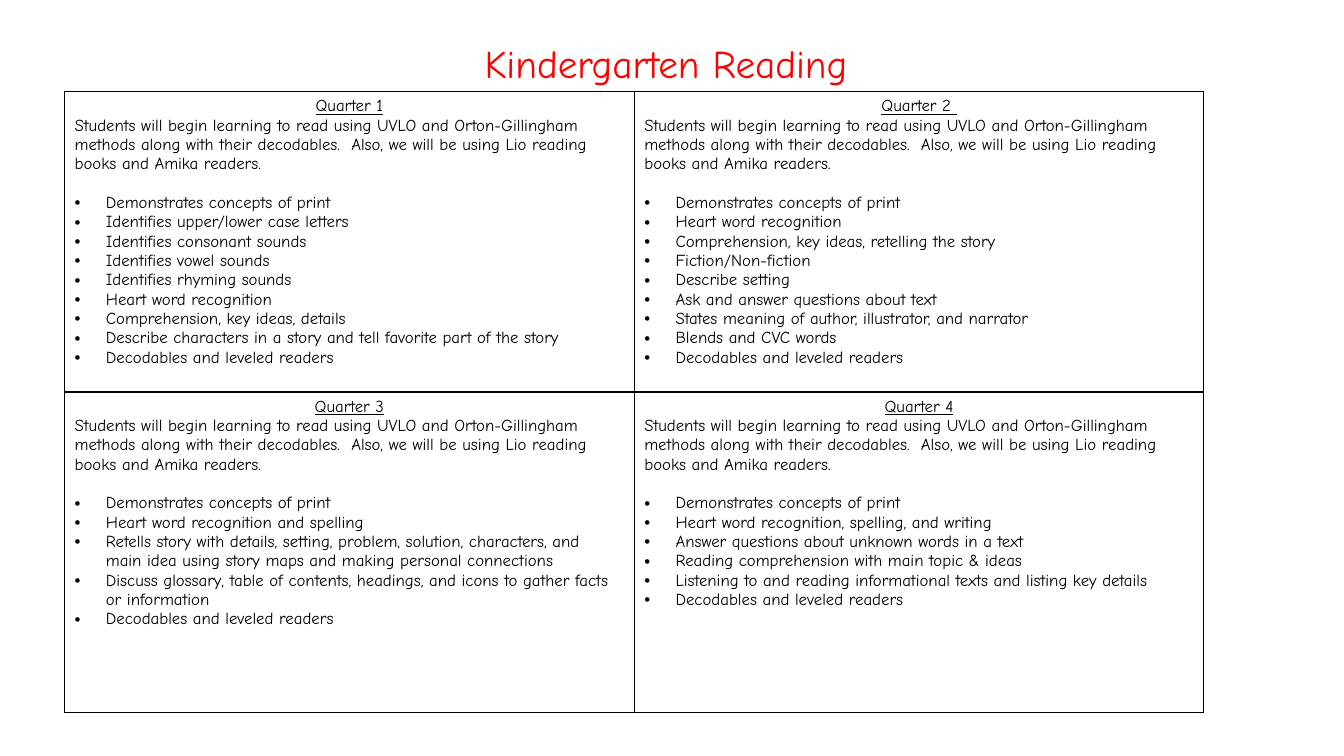
from lxml import etree
from pptx import Presentation
from pptx import util as u
from pptx.dml.color import RGBColor
from pptx.enum import text
from pptx.oxml import ns

INTRO = ("Students will begin learning to read using UVLO and Orton-Gillingham "
         "methods along with their decodables.  Also, we will be using Lio reading "
         "books and Amika readers.")
FIRST = "Demonstrates concepts of print"
LAST = "Decodables and leveled readers"
TERMS = [
    ("Quarter 1", [
        "Identifies upper/lower case letters",
        "Identifies consonant sounds",
        "Identifies vowel sounds",
        "Identifies rhyming sounds",
        "Heart word recognition",
        "Comprehension, key ideas, details",
        "Describe characters in a story and tell favorite part of the story",
    ]),
    ("Quarter 2 ", [
        "Heart word recognition",
        "Comprehension, key ideas, retelling the story",
        "Fiction/Non-fiction",
        "Describe setting",
        "Ask and answer questions about text",
        "States meaning of author, illustrator, and narrator",
        "Blends and CVC words",
    ]),
    ("Quarter 3", [
        "Heart word recognition and spelling",
        "Retells story with details, setting, problem, solution, characters, and  "
        "main idea using story maps and making personal connections",
        "Discuss glossary, table of contents, headings, and icons to gather facts "
        "or information",
    ]),
    ("Quarter 4", [
        "Heart word recognition, spelling, and writing",
        "Answer questions about unknown words in a text",
        "Reading comprehension with main topic & ideas",
        "Listening to and reading informational texts and listing key details",
    ]),
]


class Deck:
    """Holds the style and the current slide, and draws each kind of element."""

    FONT = "Comic Neue"
    HUES = {"title": "FF0000", "ink": "000000", "paper": "FFFFFF"}
    PX = 9144

    def __init__(self, wide, high):
        self.file = Presentation()
        self.file.slide_width = self.px(wide)
        self.file.slide_height = self.px(high)
        self.slide = self.file.slides.add_slide(self.file.slide_layouts[5])

    def px(self, count):
        return u.Emu(count * self.PX)

    def hue(self, name):
        return RGBColor.from_string(self.HUES[name])

    def style(self, para, size, hue="ink", line=False):
        for run in para.runs:
            run.font.name = self.FONT
            run.font.size = u.Pt(size)
            run.font.underline = line
            run.font.color.rgb = self.hue(hue)

    def title(self, words, *box):
        shape = self.slide.shapes.title
        shape.left, shape.top, shape.width, shape.height = map(self.px, box)
        frame = shape.text_frame
        frame.text = words
        frame.vertical_anchor = text.MSO_ANCHOR.MIDDLE
        para = frame.paragraphs[0]
        para.alignment = text.PP_ALIGN.CENTER
        para.line_spacing = 0.9
        self.style(para, 28, "title")

    def bullet(self, para):
        props = para._p.get_or_add_pPr()
        props.set("marL", str(self.px(31)))
        props.set("indent", str(self.px(-31)))
        font = etree.SubElement(props, ns.qn("a:buFont"))
        font.set("typeface", "Arial")
        etree.SubElement(props, ns.qn("a:buChar")).set("char", "•")

    def border(self, cell):
        props = cell._tc.get_or_add_tcPr()
        for spot, side in enumerate(("lnL", "lnR", "lnT", "lnB")):
            line = etree.Element(ns.qn("a:" + side), w=str(u.Pt(1)))
            fill = etree.SubElement(line, ns.qn("a:solidFill"))
            tint = etree.SubElement(fill, ns.qn("a:srgbClr"))
            tint.set("val", self.HUES["ink"])
            props.insert(spot, line)

    def cell(self, cell, head, goals):
        cell.fill.solid()
        cell.fill.fore_color.rgb = self.hue("paper")
        self.border(cell)
        frame = cell.text_frame
        frame.text = "\n".join([head, INTRO, FIRST, *goals, LAST])
        top, intro, *items = frame.paragraphs
        top.alignment = text.PP_ALIGN.CENTER
        self.style(top, 12, line=True)
        intro.space_after = u.Pt(13.8)
        self.style(intro, 12)
        for para in items:
            self.style(para, 12)
            self.bullet(para)

    def table(self, left, top, cols, rows, terms):
        box = map(self.px, (left, top, sum(cols), sum(rows)))
        grid = self.slide.shapes.add_table(len(rows), len(cols), *box).table
        grid.first_row = grid.horz_banding = False
        for col, wide in zip(grid.columns, cols):
            col.width = self.px(wide)
        for row, high in zip(grid.rows, rows):
            row.height = self.px(high)
        for cell, term in zip(grid.iter_cells(), terms):
            self.cell(cell, *term)


def main():
    deck = Deck(1333, 750)
    deck.title("Kindergarten Reading ", 92, 40, 1150, 51)
    deck.table(64, 91, (565, 565), (298, 318), TERMS)
    deck.file.save("out.pptx")


if __name__ == "__main__":
    main()
